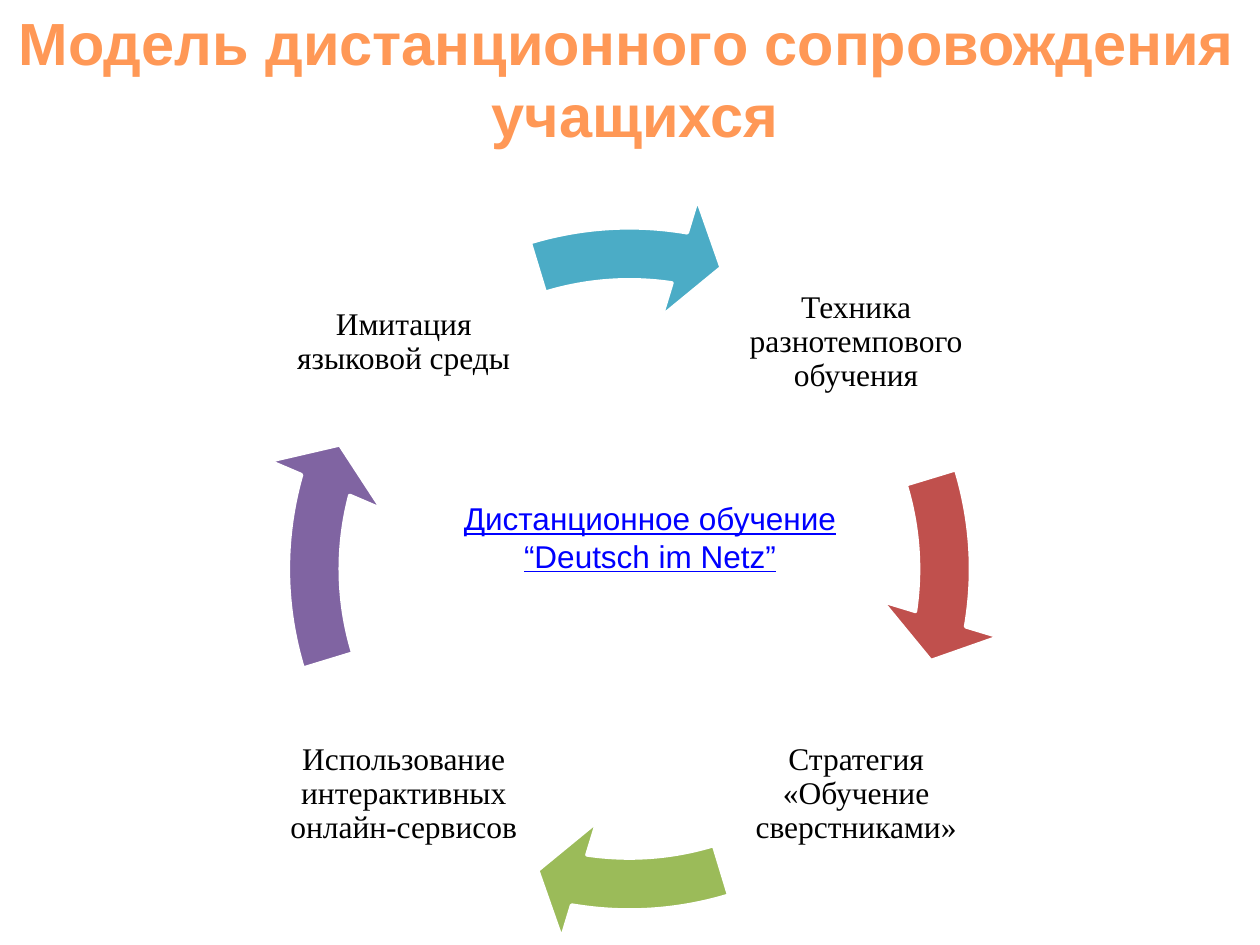
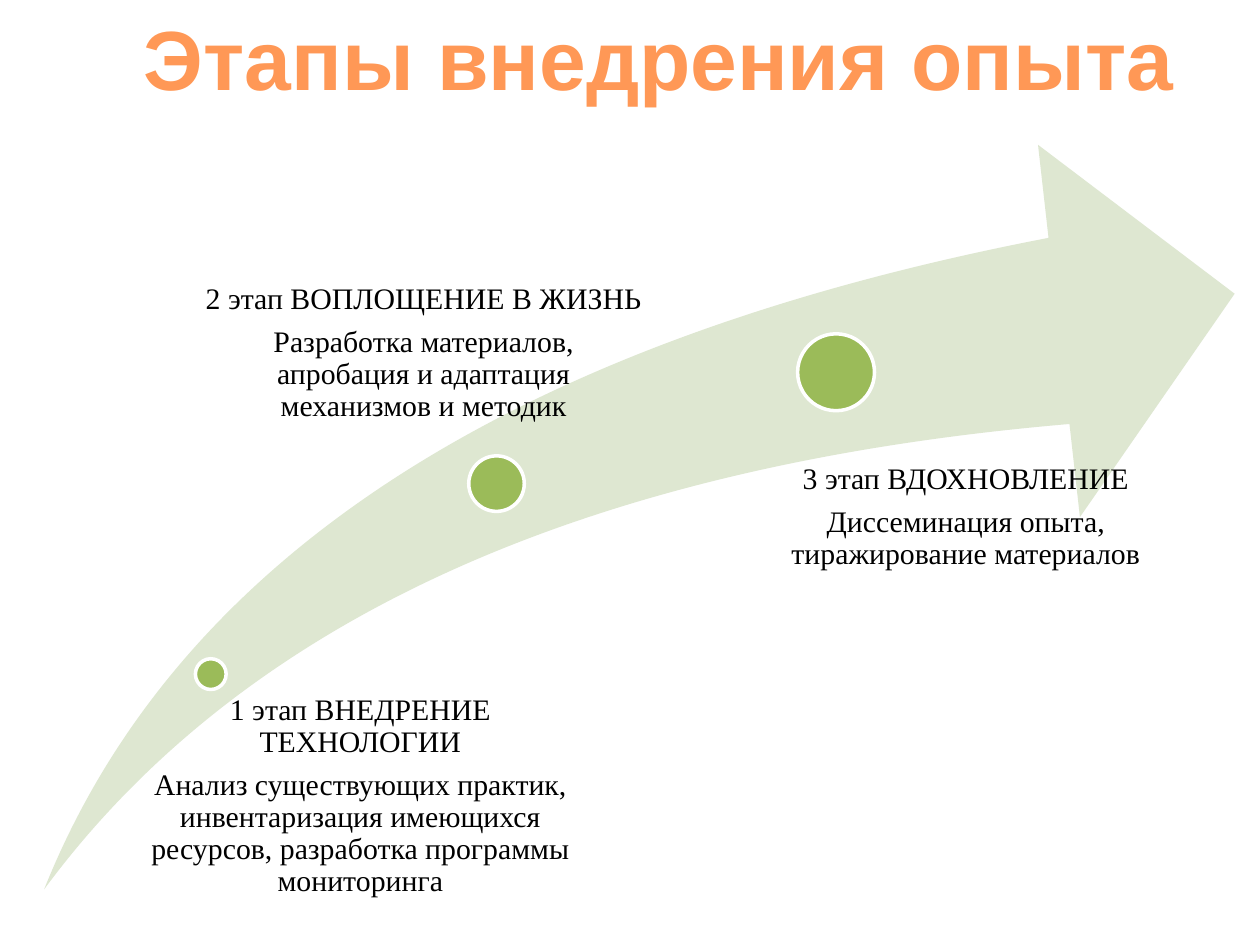
from pptx import Presentation
from pptx.dml.color import RGBColor
from pptx.enum.shapes import MSO_SHAPE
from pptx.enum.text import MSO_ANCHOR, MSO_AUTO_SIZE, PP_ALIGN
from pptx.oxml import parse_xml
from pptx.oxml.ns import nsdecls
from pptx.util import Cm, Pt

CENTER = PP_ALIGN.CENTER
TOP, MIDDLE = MSO_ANCHOR.TOP, MSO_ANCHOR.MIDDLE
GROW = MSO_AUTO_SIZE.SHAPE_TO_FIT_TEXT
ARC_ARROW = MSO_SHAPE.CIRCULAR_ARROW
SWOOSH = MSO_SHAPE.SWOOSH_ARROW
DOT = MSO_SHAPE.OVAL

COLORS = {
    "white": "FFFFFF", "text": "000000", "link": "0000FF",
    "red": "C0504D", "green": "9BBB59", "purple": "8064A2", "blue": "4BACC6",
    "swoosh": "DEE7D1",
}
TITLE_GRADIENT = [(0, "9D4700"), (78, "FF9856"), (100, "FFF5F1")]
HEADING_FONT, BODY_FONT = "Arial", "Times New Roman"

MODEL_TITLE = ["Модель дистанционного сопровождения ", "учащихся"]
MODEL_CENTER = ["Дистанционное обучение", "“Deutsch im Netz”"]
LEFT_COLUMN, RIGHT_COLUMN = 5.46, 14.58
NODE_SIZE = 5.36
RING = (5.11, 3.89, 15.16, 15.16)
ARC_START, ARC_END = 343.08, 9.16
CYCLE = [
    ("Техника разнотемпового обучения", RIGHT_COLUMN, 4.22, NODE_SIZE, "red", 0),
    ("Стратегия «Обучение сверстниками»", RIGHT_COLUMN, 13.34, NODE_SIZE, "green", 0),
    ("Использование интерактивных онлайн-сервисов", LEFT_COLUMN, 13.34, NODE_SIZE, "purple", 6.27),
    ("Имитация языковой среды", LEFT_COLUMN, 4.88, 4.04, "blue", 0),
]

STAGES_TITLE = ["Этапы внедрения опыта"]
STAGES = [
    {"dot": (3.94, 13.28, 0.62), "box": (2.49, 14, 9.22, 4.34), "indent": 0.33,
     "text": ["1 этап ВНЕДРЕНИЕ ТЕХНОЛОГИИ",
              "Анализ существующих практик, инвентаризация имеющихся ресурсов, "
              "разработка программы мониторинга"]},
    {"dot": (9.45, 9.19, 1.12), "box": (3.51, 5.72, 9.45, 3.05), "indent": 0.61,
     "text": ["2 этап ВОПЛОЩЕНИЕ В ЖИЗНЬ",
              "Разработка материалов, апробация и адаптация механизмов и методик"]},
    {"dot": (16.08, 6.73, 1.55), "box": (15.01, 9.35, 8.08, 2.39), "indent": 0.84,
     "text": ["3 этап ВДОХНОВЛЕНИЕ",
              "Диссеминация опыта, тиражирование материалов"]},
]


def rgb(name):
    return RGBColor.from_string(COLORS[name])


def add_text(slide, box, lines, size, font, color=None, insets=None,
             anchor=TOP, wrap=True, grow=False, diagram=False):
    frame = slide.shapes.add_textbox(*map(Cm, box)).text_frame
    frame.word_wrap = wrap
    frame.vertical_anchor = anchor
    if grow:
        frame.auto_size = GROW
    if insets:
        (frame.margin_left, frame.margin_top,
         frame.margin_right, frame.margin_bottom) = map(Cm, insets)
    frame.text = "\n".join(lines)
    for paragraph in frame.paragraphs:
        paragraph.alignment = CENTER
        if diagram:
            paragraph.line_spacing = 0.9
            paragraph.space_after = Pt(6.3)
        for run in paragraph.runs:
            run.font.size = Pt(size)
            run.font.name = font
            if color:
                run.font.color.rgb = rgb(color)
    return frame


def add_title(slide, box, lines, size):
    frame = add_text(slide, box, lines, size, HEADING_FONT, wrap=False, grow=True)
    stops = "".join(f'<a:gs pos="{position * 1000}"><a:srgbClr val="{color}"/></a:gs>'
                    for position, color in TITLE_GRADIENT)
    for paragraph in frame.paragraphs:
        for run in paragraph.runs:
            run.font.bold = True
            run.font._element.insert(0, parse_xml(
                f'<a:gradFill {nsdecls("a")}><a:gsLst>{stops}</a:gsLst>'
                '<a:lin ang="5400000"/></a:gradFill>'))


def add_figure(slide, kind, box, fill, outlined=True, adjustments=()):
    figure = slide.shapes.add_shape(kind, *map(Cm, box))
    figure.shadow.inherit = False
    figure.fill.solid()
    figure.fill.fore_color.rgb = rgb(fill)
    if outlined:
        figure.line.color.rgb = rgb("white")
        figure.line.width = Pt(2)
    else:
        figure.line.fill.background()
    for index, value in enumerate(adjustments):
        figure.adjustments[index] = value


def build_model(slide):
    add_title(slide, (0, 0, 25.6, 3.18), MODEL_TITLE, 34)
    for turn, (label, left, top, height, color, stretch) in enumerate(CYCLE):
        add_text(slide, (left, top, NODE_SIZE, height), [label], 18, BODY_FONT, "text",
                 insets=[0.08] * 4, anchor=MIDDLE, diagram=True)
        end = (ARC_END + 90 * turn + stretch) % 360
        start = (ARC_START + 90 * turn) % 360
        add_figure(slide, ARC_ARROW, RING, color,
                   adjustments=(0.069, 7.755 * 0.6, end * 0.6, start * 0.6, 0.081))
    center = add_text(slide, (8.51, 9.93, 9.19, 1.8), MODEL_CENTER, 18,
                      HEADING_FONT, "link", grow=True)
    for paragraph in center.paragraphs:
        paragraph.runs[0].font.underline = True


def build_stages(slide):
    add_title(slide, (2.54, 0, 21.49, 2.31), STAGES_TITLE, 48)
    add_figure(slide, SWOOSH, (0.89, 2.92, 24, 15.01), "swoosh",
               outlined=False, adjustments=(0.25, 0.25))
    for stage in STAGES:
        left, top, diameter = stage["dot"]
        add_figure(slide, DOT, (left, top, diameter, diameter), "green")
        add_text(slide, stage["box"], stage["text"], 17, BODY_FONT, "text",
                 insets=(stage["indent"], 0, 0, 0), diagram=True)


def main():
    deck = Presentation()
    deck.slide_width, deck.slide_height = Cm(25.4), Cm(19.05)
    for build in (build_model, build_stages):
        build(deck.slides.add_slide(deck.slide_layouts[6]))
    deck.save("out.pptx")


if __name__ == "__main__":
    main()
